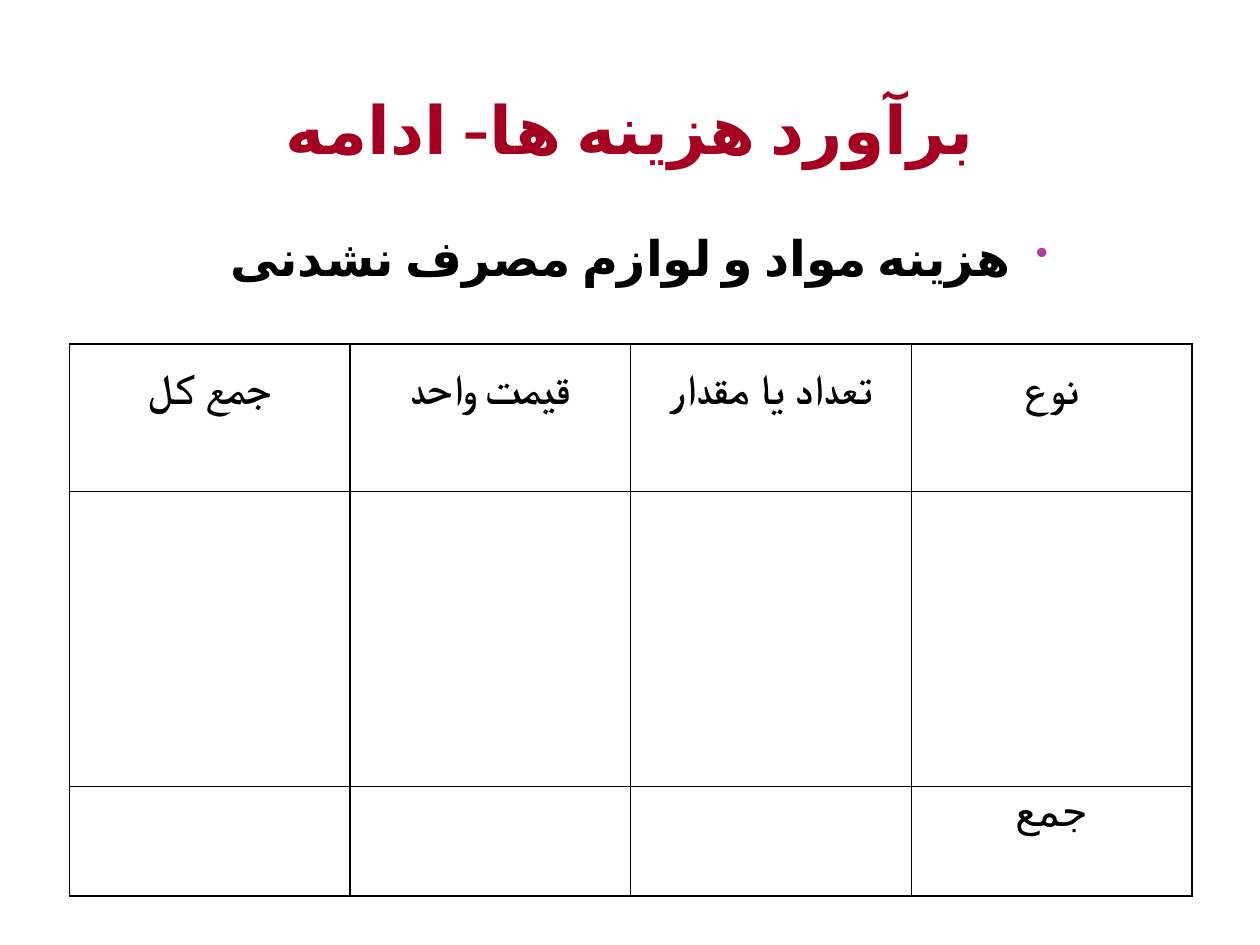
import pptx
import pptx.dml.color
import pptx.enum.text
import pptx.oxml
import pptx.oxml.ns
import pptx.util
from lxml import etree

Pt = pptx.util.Pt
RGB = pptx.dml.color.RGBColor.from_string
ALIGN = pptx.enum.text.PP_ALIGN
ANCHOR = pptx.enum.text.MSO_ANCHOR
qn = pptx.oxml.ns.qn

# Content
TITLE = "برآورد هزینه ها- ادامه"
BULLET = "هزینه مواد و لوازم مصرف نشدنی"
ROWS = [
    ["جمع كل", "قيمت واحد", "تعداد يا مقدار", "نوع"],
    ["", "", "", ""],
    ["", "", "", "جمع"],
]

# Layout in points: left, top, width, height
TITLE_BOX = (36, 21.6, 648, 74.2)
BODY_BOX = (36, 126.7, 570.2, 381.6)
TABLE_AT = (39.6, 196.6)
COL_WIDTH = 160.4
ROW_HEIGHTS = [84.2, 168.5, 62.6]
INDENT = 21.6

THEME = {
    "title": "A50021", "text": "000000", "bullet": "B13F9A",
    "cell": "FFFFFF", "border": "000000",
    "title_size": 38, "body_size": 28, "table_size": 24,
    "font": "Cabin", "header_font": "Times New Roman",
}


def write(p, text, font, size, color, bold, align):
    """Write one right-to-left paragraph."""
    p.text = text
    p.alignment = align
    p._p.get_or_add_pPr().set("rtl", "1")
    for r in p.runs:
        r.font.name, r.font.size, r.font.bold = font, Pt(size), bold
        r.font.color.rgb = RGB(color)
        r.font.language_id = pptx.enum.lang.MSO_LANGUAGE_ID.FARSI
        etree.SubElement(r._r.get_or_add_rPr(), qn("a:cs"), typeface=font)


def add_box(s, box, anchor):
    tf = s.shapes.add_textbox(*map(Pt, box)).text_frame
    tf.word_wrap = True
    tf.vertical_anchor = anchor
    return tf


def add_bullet(p):
    pPr = p._p.get_or_add_pPr()
    pPr.set("marR", str(Pt(INDENT)))
    pPr.set("marL", str(Pt(INDENT)))
    pPr.set("indent", str(-Pt(INDENT)))
    color = etree.SubElement(pPr, qn("a:buClr"))
    etree.SubElement(color, qn("a:srgbClr"), val=THEME["bullet"])
    etree.SubElement(pPr, qn("a:buSzPct"), val="73000")
    etree.SubElement(pPr, qn("a:buChar"), char="•")


def add_borders(cell):
    tcPr = cell._tc.get_or_add_tcPr()
    for i, side in enumerate(("lnL", "lnR", "lnT", "lnB")):
        ln = etree.Element(qn("a:" + side), w=str(Pt(1)))
        fill = etree.SubElement(ln, qn("a:solidFill"))
        etree.SubElement(fill, qn("a:srgbClr"), val=THEME["border"])
        tcPr.insert(i, ln)


prs = pptx.Presentation()
prs.slide_width, prs.slide_height = Pt(720), Pt(540)
s = prs.slides.add_slide(prs.slide_layouts[6])

# Title
tf = add_box(s, TITLE_BOX, ANCHOR.BOTTOM)
tf.margin_left = tf.margin_right = Pt(3.6)
tf.margin_top = tf.margin_bottom = 0
write(tf.paragraphs[0], TITLE, THEME["font"], THEME["title_size"],
      THEME["title"], True, ALIGN.CENTER)

# Bullet line
tf = add_box(s, BODY_BOX, ANCHOR.TOP)
p = tf.paragraphs[0]
add_bullet(p)
write(p, BULLET, THEME["font"], THEME["body_size"], THEME["text"], True,
      ALIGN.RIGHT)

# Cost table
cols = len(ROWS[0])
table = s.shapes.add_table(
    len(ROWS), cols, *map(Pt, TABLE_AT),
    Pt(COL_WIDTH * cols), Pt(sum(ROW_HEIGHTS))).table
for col in table.columns:
    col.width = Pt(COL_WIDTH)
for i, (row, height) in enumerate(zip(ROWS, ROW_HEIGHTS)):
    table.rows[i].height = Pt(height)
    header = i == 0
    for j, text in enumerate(row):
        cell = table.cell(i, j)
        cell.fill.solid()
        cell.fill.fore_color.rgb = RGB(THEME["cell"])
        add_borders(cell)
        cell.margin_left = cell.margin_right = Pt(5)
        cell.margin_top = cell.margin_bottom = 0
        if text:
            p = cell.text_frame.paragraphs[0]
            write(p, text, THEME["header_font" if header else "font"],
                  THEME["table_size"], THEME["text"], header, ALIGN.CENTER)
            if header:
                p.line_spacing = 1.5

prs.save("out.pptx")
